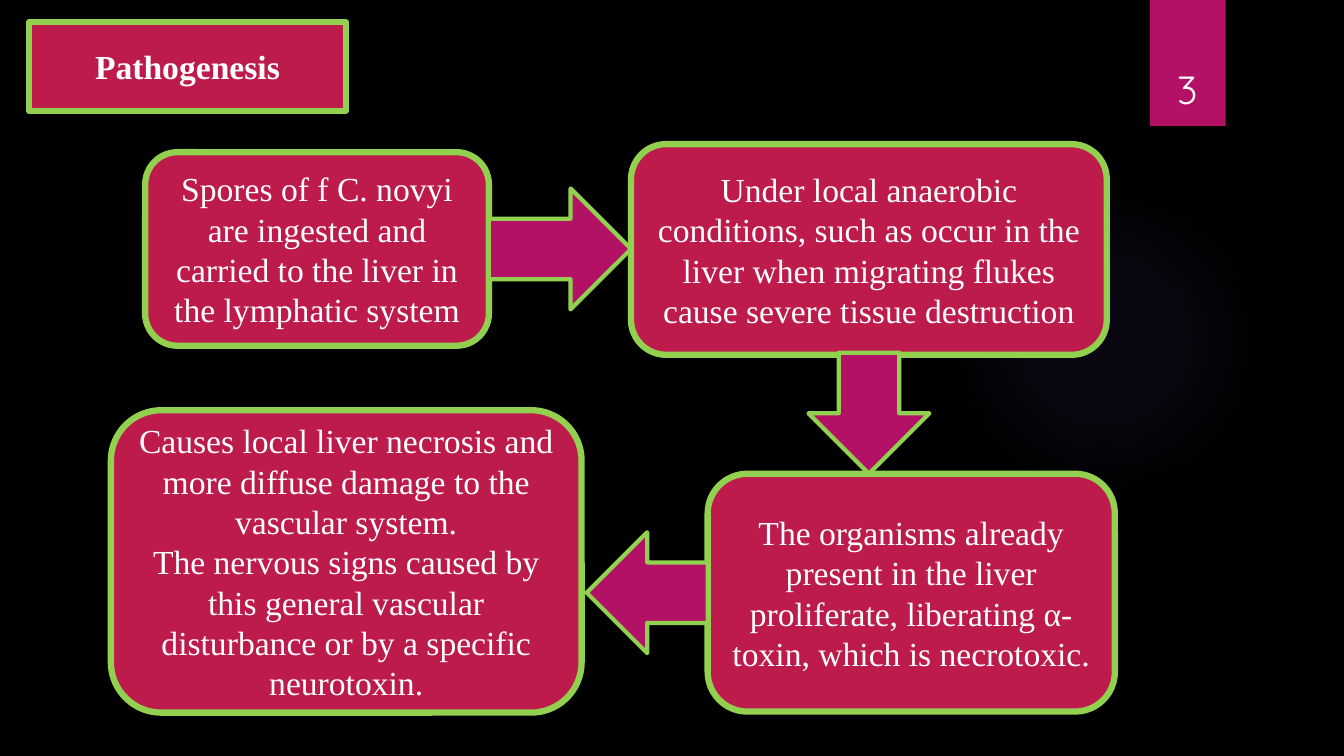
from lxml import etree
from pptx import Presentation
from pptx import util as u
from pptx.dml.color import RGBColor
from pptx.enum import shapes, text
from pptx.oxml import ns

BLACK = RGBColor(0x00, 0x00, 0x00)
WHITE = RGBColor(0xFF, 0xFF, 0xFF)
CRIMSON = RGBColor(0xBD, 0x1B, 0x4C)
MAGENTA = RGBColor(0xB3, 0x11, 0x66)
LIME = RGBColor(0x92, 0xD0, 0x50)
VIOLET = RGBColor(0x9B, 0x6B, 0xF2)
SERIF = "Times New Roman"
SANS = "Quicksand"
COLUMNS, ROWS = 133.33, 75


class FlowSlide:
    def __init__(self, presentation):
        self.column = presentation.slide_width / COLUMNS
        self.row = presentation.slide_height / ROWS
        self.slide = presentation.slides.add_slide(presentation.slide_layouts[5])
        self.slide.background.fill.solid()
        self.slide.background.fill.fore_color.rgb = BLACK

    def place(self, left, top, width, height):
        return (u.Emu(round(left * self.column)), u.Emu(round(top * self.row)),
                u.Emu(round(width * self.column)), u.Emu(round(height * self.row)))

    def paint(self, shape, color, border=None):
        shape.fill.solid()
        shape.fill.fore_color.rgb = color
        if border:
            shape.line.color.rgb = LIME
            shape.line.width = u.Pt(border)
        else:
            shape.line.fill.background()

    def add_shape(self, kind, area, color, border=None):
        shape = self.slide.shapes.add_shape(kind, *self.place(*area))
        shape.shadow.inherit = False
        self.paint(shape, color, border)
        return shape

    def set_text(self, shape, lines, font=SERIF, size=24, bold=False,
                 anchor=text.MSO_ANCHOR.MIDDLE):
        frame = shape.text_frame
        frame.word_wrap = True
        frame.auto_size = text.MSO_AUTO_SIZE.NONE
        frame.vertical_anchor = anchor
        for index, line in enumerate(lines):
            paragraph = frame.add_paragraph() if index else frame.paragraphs[0]
            paragraph.alignment = text.PP_ALIGN.CENTER
            run = paragraph.add_run()
            run.text = line
            run.font.name = font
            run.font.size = u.Pt(size)
            run.font.bold = bold
            run.font.color.rgb = WHITE

    def title(self, area, line):
        title = self.slide.shapes.title
        title.left, title.top, title.width, title.height = self.place(*area)
        geometry = etree.SubElement(title._element.spPr, ns.qn("a:prstGeom"), prst="roundRect")
        etree.SubElement(geometry, ns.qn("a:avLst"))
        self.paint(title, CRIMSON, 4.5)
        self.set_text(title, [line], bold=True)

    def step(self, area, *lines):
        box = self.add_shape(shapes.MSO_SHAPE.ROUNDED_RECTANGLE, area, CRIMSON, 4.5)
        self.set_text(box, lines)

    def arrow(self, area, rotation=0):
        arrow = self.add_shape(shapes.MSO_SHAPE.RIGHT_ARROW, area, MAGENTA, 3)
        arrow.rotation = rotation

    def glow(self, area, stops):
        glow = self.add_shape(shapes.MSO_SHAPE.OVAL, area, VIOLET)
        solid = glow._element.spPr.find(ns.qn("a:solidFill"))
        gradient = etree.Element(ns.qn("a:gradFill"), rotWithShape="1")
        stop_list = etree.SubElement(gradient, ns.qn("a:gsLst"))
        for position, opacity in stops:
            stop = etree.SubElement(stop_list, ns.qn("a:gs"), pos=str(position * 1000))
            color = etree.SubElement(stop, ns.qn("a:srgbClr"), val=str(VIOLET))
            etree.SubElement(color, ns.qn("a:alpha"), val=str(opacity * 1000))
        circle = etree.SubElement(gradient, ns.qn("a:path"), path="circle")
        etree.SubElement(circle, ns.qn("a:fillToRect"),
                         dict.fromkeys("ltrb", "50000"))
        solid.getparent().replace(solid, gradient)

    def page_number(self, tab_area, text_area, number):
        self.add_shape(shapes.MSO_SHAPE.RECTANGLE, tab_area, MAGENTA)
        label = self.slide.shapes.add_textbox(*self.place(*text_area))
        self.set_text(label, [number], SANS, 28, anchor=text.MSO_ANCHOR.BOTTOM)


def main():
    presentation = Presentation()
    presentation.slide_width = u.Inches(13.33)
    presentation.slide_height = u.Inches(7.5)
    flow = FlowSlide(presentation)

    flow.glow((94.1, 18.3, 30.8, 30.8), [(0, 7), (36, 6), (69, 0)])
    flow.page_number((114.1, 0, 7.5, 12.5), (113.2, 3.2, 9.2, 8.4), "3")
    flow.title((2.9, 2.2, 31.4, 8.8), "Pathogenesis")

    flow.step((14.4, 15.1, 34.1, 19.2),
              "Spores of f C. novyi are ingested and carried to the liver "
              "in the lymphatic system")
    flow.arrow((48.5, 18.7, 14.1, 12))
    flow.step((11, 40.7, 46.7, 30),
              "Causes local liver necrosis and more diffuse damage to the vascular system.",
              "The nervous signs caused by this general vascular disturbance "
              "or by a specific neurotoxin.")
    flow.step((62.6, 14.3, 47.2, 20.9),
              "Under local anaerobic conditions, such as occur in the liver when "
              "migrating flukes cause severe tissue destruction")
    flow.step((70.2, 47, 40.4, 23.6),
              "The organisms already present in the liver proliferate, "
              "liberating α-toxin, which is necrotoxic.")
    flow.arrow((80.2, 35, 12, 12), 90)
    flow.arrow((58.2, 52.8, 12, 12), 180)

    presentation.save("out.pptx")


if __name__ == "__main__":
    main()
